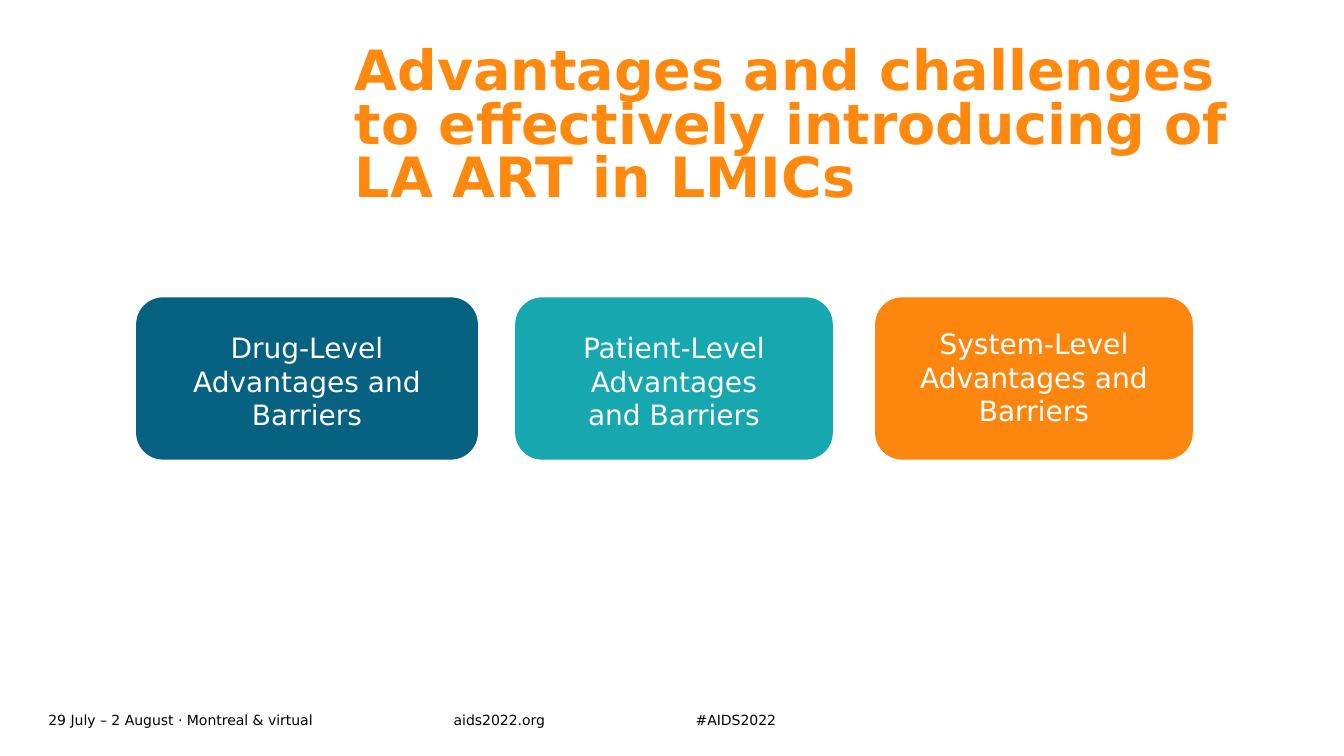
from pptx import Presentation
from pptx.dml.color import RGBColor
from pptx.enum.shapes import MSO_SHAPE
from pptx.enum.text import MSO_ANCHOR, PP_ALIGN
from pptx.util import Pt

PX = 9144  # EMU per px, 100 px to the inch
FONT = "DejaVu Sans"
ROUNDED = MSO_SHAPE.ROUNDED_RECTANGLE
TOP, MIDDLE = MSO_ANCHOR.TOP, MSO_ANCHOR.MIDDLE
LEFT, CENTER = PP_ALIGN.LEFT, PP_ALIGN.CENTER
TITLE_ONLY = 5

CARD_TOP, CARD_HEIGHT = 295, 161
LABEL_HEIGHT = 111
# card left, card width, fill, label width, label offset from card top, label
CARDS = [
    (135, 339, "076282", 313, 28, "Drug-Level Advantages and Barriers"),
    (511, 315, "17A7AF", 243, 28, "Patient-Level Advantages and Barriers"),
    (868, 315, "FD870E", 265, 24, "System-Level Advantages and Barriers"),
]
FOOTER = [
    (0, 402, "29 July – 2 August · Montreal & virtual"),
    (402, 193, "aids2022.org"),
    (642, 193, "#AIDS2022"),
]


def emu(*lengths):
    return [n * PX for n in lengths]


def rgb(hex_color):
    return RGBColor.from_string(hex_color)


def write(sp, text, size, color, bold=False, align=LEFT, anchor=TOP,
          inset=(0, 0), line_spacing=None, space_after=0):
    """Fill a shape with one formatted paragraph; inset is (side, top) in px."""
    tf = sp.text_frame
    tf.word_wrap = True
    tf.vertical_anchor = anchor
    tf.margin_left = tf.margin_right = inset[0] * PX
    tf.margin_top = tf.margin_bottom = inset[1] * PX
    p = tf.paragraphs[0]
    p.alignment = align
    p.space_before, p.space_after = Pt(0), Pt(space_after)
    if line_spacing:
        p.line_spacing = line_spacing
    r = p.add_run()
    r.text = text
    r.font.name, r.font.size, r.font.bold = FONT, Pt(size), bold
    r.font.color.rgb = rgb(color)


def add_title(s, x, y, w, h):
    sp = s.shapes.title
    sp.left, sp.top, sp.width, sp.height = emu(x, y, w, h)
    write(sp, "Advantages and challenges to effectively introducing of LA ART in LMICs",
          39.6, "FF890E", bold=True, line_spacing=0.8)


def add_card(s, x, y, w, h, fill, label_width, label_offset, label):
    card = s.shapes.add_shape(ROUNDED, *emu(x, y, w, h))
    card.shadow.inherit = False
    card.fill.solid()
    card.fill.fore_color.rgb = rgb(fill)
    card.line.fill.background()
    label_x = x + (w - label_width) // 2
    box = s.shapes.add_textbox(
        *emu(label_x, y + label_offset, label_width, LABEL_HEIGHT))
    write(box, label, 20, "FFFFFF", align=CENTER, inset=(10, 5), space_after=12)


def add_footer(s, x, y, h):
    for offset, w, text in FOOTER:
        box = s.shapes.add_textbox(*emu(x + offset, y, w, h))
        write(box, text, 10, "000000", anchor=MIDDLE)


def main():
    prs = Presentation()
    prs.slide_width, prs.slide_height = emu(1333, 750)
    s = prs.slides.add_slide(prs.slide_layouts[TITLE_ONLY])
    add_footer(s, 48, 702, 24)
    for x, w, *style in CARDS:
        add_card(s, x, CARD_TOP, w, CARD_HEIGHT, *style)
    add_title(s, 352, 48, 933, 161)
    prs.save("out.pptx")


if __name__ == "__main__":
    main()
